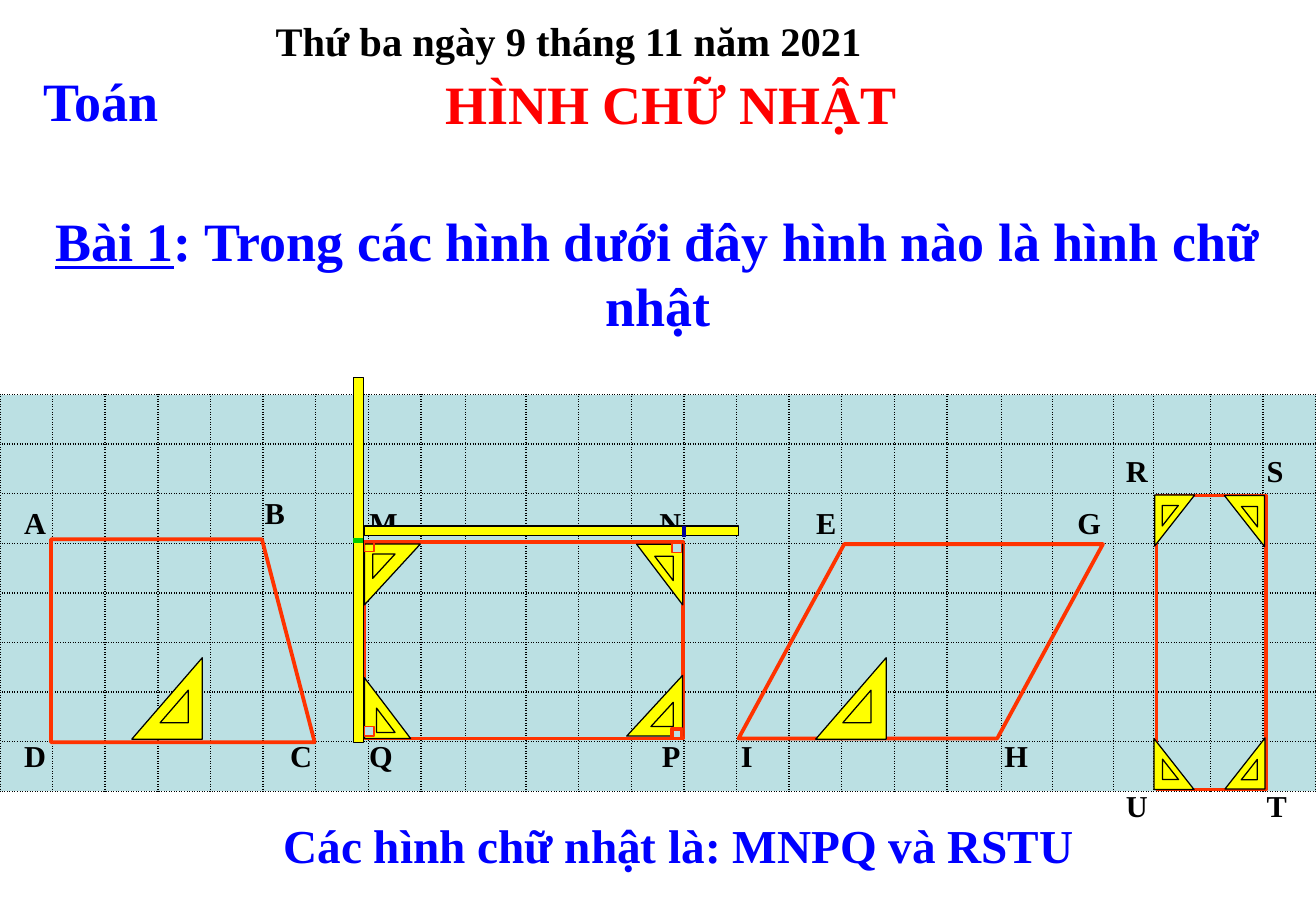
"""Build a maths slide on recognising rectangles over a squared grid."""
from lxml import etree
from pptx import Presentation
from pptx.dml.color import RGBColor
from pptx.enum.shapes import MSO_CONNECTOR, MSO_SHAPE
from pptx.enum.text import MSO_ANCHOR, PP_ALIGN
from pptx.oxml import parse_xml
from pptx.util import Cm, Pt

RECT, TRIANGLE = MSO_SHAPE.RECTANGLE, MSO_SHAPE.RIGHT_TRIANGLE
TRAPEZIUM, PARALLELOGRAM = MSO_SHAPE.FLOWCHART_MANUAL_INPUT, MSO_SHAPE.PARALLELOGRAM
STRAIGHT = MSO_CONNECTOR.STRAIGHT
TOP, MIDDLE = MSO_ANCHOR.TOP, MSO_ANCHOR.MIDDLE
LEFT, CENTER = PP_ALIGN.LEFT, PP_ALIGN.CENTER
INCH = 2.54
NS = "http://schemas.openxmlformats.org/drawingml/2006/main"
COLORS = {"grid": "BBE0E3", "outline": "FF3300", "tool": "FFFF00", "black": "000000",
          "blue": "0000FF", "red": "FF0000", "navy": "000099", "green": "00CC00"}
RGB = {name: RGBColor.from_string(value) for name, value in COLORS.items()}

prs = Presentation()
prs.slide_width, prs.slide_height = Cm(65 * INCH / 6), Cm(7.5 * INCH)
s = prs.slides.add_slide(prs.slide_layouts[6])


def add_figure(kind, box, fill=None, line="black", width=0.75, rotation=0):
    sp = s.shapes.add_shape(kind, *[Cm(v * INCH) for v in box])
    sp.shadow.inherit = False
    sp.rotation = rotation
    if fill:
        sp.fill.solid()
        sp.fill.fore_color.rgb = RGB[fill]
    else:
        sp.fill.background()
    sp.line.color.rgb = RGB[line]
    sp.line.width = Pt(width)
    return sp


def add_text(box, runs, size, color="black", align=LEFT, anchor=TOP, **margins):
    tf = s.shapes.add_textbox(*[Cm(v * INCH) for v in box]).text_frame
    for name, value in {"word_wrap": True, "vertical_anchor": anchor, **margins}.items():
        setattr(tf, name, value)
    p = tf.paragraphs[0]
    p.alignment = align
    for text, underline in runs:
        r = p.add_run()
        r.text = text
        r.font.color.rgb = RGB[color]
        font = {"name": "Times New Roman", "size": Pt(size), "bold": True, "underline": underline}
        for name, value in font.items():
            setattr(r.font, name, value)


col_widths = [1.1] * 8 + [0.93, 1.27] + [1.1] * 8 + [1.14, 1.07, 1.27, 0.84, 1.19, 1.1, 1.1]
table = s.shapes.add_table(8, len(col_widths), Cm(0), Cm(8.25), Cm(27.5), Cm(8.3)).table
table.first_row = table.horz_banding = False
for col, width in zip(table.columns, col_widths):
    col.width = Cm(width)
for row in table.rows:
    row.height = Cm(8.3 / 8)
for cell in table.iter_cells():
    cell.margin_top = cell.margin_bottom = Cm(0)
    cell.fill.solid()
    cell.fill.fore_color.rgb = RGB["grid"]
    for i, side in enumerate(("lnL", "lnR", "lnT", "lnB")):
        border = parse_xml(
            f'<a:{side} xmlns:a="{NS}" w="12700"><a:solidFill><a:srgbClr val="{COLORS["black"]}"/>'
            f'</a:solidFill><a:prstDash val="sysDot"/></a:{side}>')
        cell._tc.get_or_add_tcPr().insert(i, border)

add_figure(TRAPEZIUM, (0.67, 4.19, 1.67, 2.17), line="outline", width=2.25, rotation=90)
for box in [(3, 4.46, 2.62, 1.62), (9.52, 4.08, 0.9, 2.42)]:
    add_figure(RECT, box, line="outline", width=2.25)
sp = add_figure(PARALLELOGRAM, (6.08, 4.48, 3, 1.6), line="outline", width=2.25)
sp.adjustments[0] = 0.544

vertices = [
    ("A", 0.1, 4.1), ("B", 2.08, 4.02), ("C", 2.29, 6.02), ("D", 0.1, 6.02),
    ("M", 2.94, 4.1), ("N", 5.33, 4.1), ("P", 5.35, 6.02), ("Q", 2.94, 6.02),
    ("E", 6.62, 4.1), ("G", 8.77, 4.1), ("H", 8.17, 6.02), ("I", 6, 6.02),
    ("R", 9.17, 3.67), ("S", 10.33, 3.67), ("T", 10.33, 6.43), ("U", 9.17, 6.43),
]
for letter, x, y in vertices:
    add_text((x, y, 0.5, 0.4), [(letter, False)], 18)

add_figure(RECT, (3, 4.33, 3.08, 0.08), "tool")
add_figure(RECT, (1.45, 4.57, 3, 0.08), "tool", rotation=270)

ticks = [(5.63, 4.33, 5.63, 4.42, "navy", 2.25), (2.99, 4.45, 2.91, 4.45, "green", 3)]
for x, y, dx, dy in [(9.52, 4.08, 1, 1), (9.54, 6.5, 1, -1), (10.39, 6.5, -1, -1), (10.4, 4.08, -1, 1)]:
    ticks.append((x + 0.07 * dx, y, x + 0.07 * dx, y + 0.08 * dy, "outline", 2.25))
    ticks.append((x, y + 0.08 * dy, x + 0.08 * dx, y + 0.08 * dy, "outline", 2.25))
for *ends, color, width in ticks:
    tick = s.shapes.add_connector(STRAIGHT, *[Cm(v * INCH) for v in ends])
    tick.line.color.rgb = RGB[color]
    tick.line.width = Pt(width)
    etree.SubElement(tick._element.spPr, f"{{{NS}}}effectLst")

set_squares = [
    (1.04, 5.46, 0.67, 0.58, 1.3, 5.7, 270), (6.67, 5.46, 0.67, 0.58, 6.92, 5.7, 270),
    (2.98, 4.5, 0.5, 0.46, 3.06, 4.57, 90), (5.24, 4.48, 0.38, 0.5, 5.39, 4.58, 180),
    (3, 5.58, 0.38, 0.5, 3.1, 5.83, 0), (5.14, 5.58, 0.5, 0.46, 5.35, 5.79, 270),
    (10.04, 6.12, 0.42, 0.33, 10.2, 6.27, 270), (9.46, 4.12, 0.42, 0.33, 9.55, 4.18, 90),
    (9.5, 6.08, 0.33, 0.42, 9.57, 6.25, 0), (10.08, 4.08, 0.33, 0.42, 10.22, 4.17, 180),
]
for x, y, w, h, hole_x, hole_y, rotation in set_squares:
    for box in [(x, y, w, h), (hole_x, hole_y, 0.4 * w, 0.4 * h)]:
        add_figure(TRIANGLE, box, "tool", rotation=rotation)

right_angles = [(3, 4.46, None, 1), (5.53, 4.47, "grid", 1), (3, 5.98, "grid", 1), (5.53, 6, "grid", 2.25)]
for x, y, fill, width in right_angles:
    add_figure(RECT, (x, y, 0.08, 0.08), fill, "outline", width)

add_text((0, 1.83, 10.83, 0.83),
         [("Bài 1", True), (": Trong các hình dưới đây hình nào là hình chữ nhật", False)],
         32, "blue", CENTER, MIDDLE)
add_text((1.17, 6.58, 8.83, 0.75), [("Các hình chữ nhật là: MNPQ và RSTU", False)],
         28, "blue", CENTER, MIDDLE)
add_text((0.42, 0, 9.83, 1.58), [("HÌNH CHỮ NHẬT", False)], 32, "red", CENTER,
         margin_left=Cm(1.2), margin_top=Cm(1.48))
add_text((2.17, 0.08, 7.58, 0.51), [("Thứ ba ngày 9 tháng 11 năm 2021", False)], 24)
add_text((-0.08, 0.56, 1.83, 0.53), [("Toán", False)], 32, "blue", CENTER, MIDDLE)

prs.save("out.pptx")
